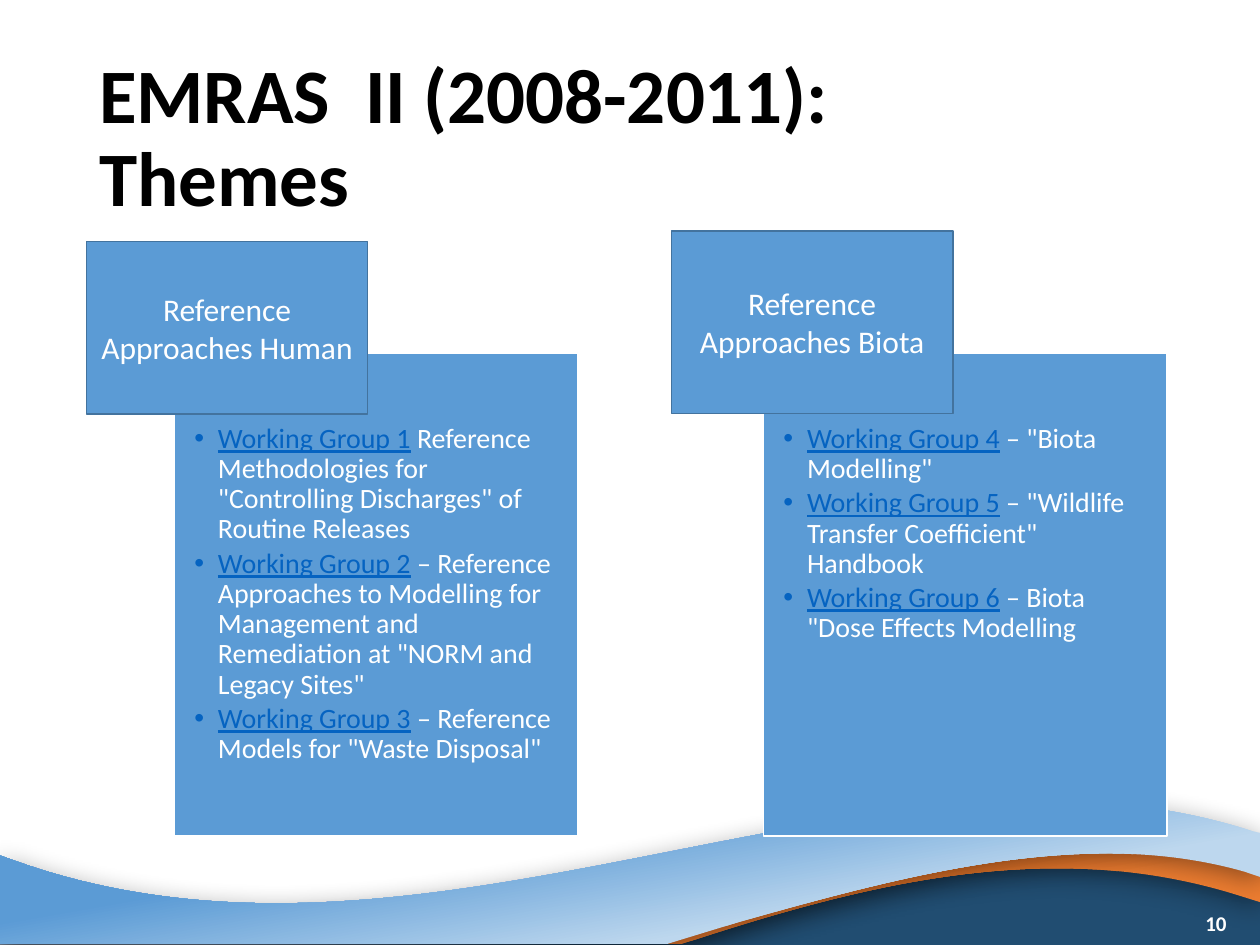
"""Build the EMRAS II themes slide with two reference-approach panels."""
from lxml.etree import SubElement
from pptx import Presentation
from pptx.dml.color import RGBColor
from pptx.enum.shapes import MSO_SHAPE
from pptx.enum.text import MSO_ANCHOR, PP_ALIGN
from pptx.oxml.ns import qn
from pptx.util import Pt

BLACK = RGBColor(0x00, 0x00, 0x00)
WHITE = RGBColor(0xFF, 0xFF, 0xFF)
BLUE = RGBColor(0x5B, 0x9B, 0xD5)
BLUE_EDGE = RGBColor(0x43, 0x73, 0x9E)
PALE_BLUE = RGBColor(0xBD, 0xD7, 0xEE)
LINK = RGBColor(0x05, 0x63, 0xC1)
SLATE = RGBColor(0x84, 0x97, 0xB0)
NAVY = RGBColor(0x21, 0x4D, 0x71)
ORANGE = RGBColor(0xED, 0x7D, 0x31)
RUST = RGBColor(0xC5, 0x5A, 0x11)
FONT = "Calibri"

WAVES = [
    (725, 60, [(0.21, SLATE), (0.51, NAVY)], [
        (0, 514), (165, 538.5, 216, 544, 501, 489),
        (621.4, 489, 751.7, 487.4, 720, 504.7), (720, 544.3), (0, 544.3)]),
    (720, 260, [(0.28, ORANGE), (0.62, RUST)], [
        (596.9, 478.1), (603.4, 478.1, 609.8, 478.1, 616.3, 478.1),
        (649.4, 478.8, 681.1, 481.7, 710.6, 488.2),
        (720, 491), (720, 515.5), (708.5, 511.9),
        (604.1, 478.8, 500.4, 503.3, 398.9, 536.4), (389.5, 539.3), (0, 539.3),
        (0, 506.2), (0.7, 506.2), (144, 563.8, 394.6, 479.5, 596.9, 478.1)]),
    (720, 260, [(0.3, PALE_BLUE), (0.67, BLUE)], [
        (600.5, 457.9), (640.1, 457.9, 678.2, 463, 716.4, 475.2), (720, 475.9),
        (720, 501.1), (711.4, 498.2), (623.5, 473, 524.9, 497.5, 421.9, 527),
        (381.6, 539.3), (0, 539.3), (0, 488.9), (12.2, 493.2),
        (207.4, 560.9, 411.8, 457.2, 600.5, 457.9)]),
]

THEMES = [
    ("Reference Approaches Human", 49.5, 138, 98.5, 99.7, [
        ("Working Group 1", " Reference Methodologies for \"Controlling Discharges\" of Routine Releases"),
        ("Working Group 2", " – Reference Approaches to Modelling for Management and Remediation at \"NORM and Legacy Sites\""),
        ("Working Group 3", " – Reference Models for \"Waste Disposal\"")]),
    ("Reference Approaches Biota", 383.8, 131.8, 104.5, 436.3, [
        ("Working Group 4", " – \"Biota Modelling\""),
        ("Working Group 5", " – \"Wildlife Transfer Coefficient\" Handbook"),
        ("Working Group 6", " – Biota \"Dose Effects Modelling")]),
]


def add_run(p, text, size, color, bold=False, underline=False):
    r = p.add_run()
    r.text = text
    r.font.name = FONT
    r.font.size = Pt(size)
    r.font.color.rgb = color
    r.font.bold = bold
    r.font.underline = underline


def add_box(left, top, width, height, edge):
    sp = s.shapes.add_shape(MSO_SHAPE.RECTANGLE, Pt(left), Pt(top), Pt(width), Pt(height))
    sp.shadow.inherit = False
    sp.fill.solid()
    sp.fill.fore_color.rgb = BLUE
    sp.line.color.rgb = edge
    sp.line.width = Pt(1)
    return sp


prs = Presentation()
prs.slide_width, prs.slide_height = Pt(720), Pt(540)
s = prs.slides.add_slide(prs.slide_layouts[5])

for width, angle, stops, steps in WAVES:
    fb = s.shapes.build_freeform(Pt(steps[0][0]), Pt(steps[0][1]))
    fb.add_line_segments([(Pt(step[-2]), Pt(step[-1])) for step in steps[1:]], close=True)
    sp = fb.convert_to_shape()
    outline = next(sp._element.iter(qn("a:path")))
    for segment, step in zip(outline.findall(qn("a:lnTo")), steps[1:]):
        if len(step) == 6:
            segment.tag = qn("a:cubicBezTo")
            for child in list(segment):
                segment.remove(child)
            for x, y in zip(step[::2], step[1::2]):
                SubElement(segment, qn("a:pt"), x=str(Pt(x) - sp.left), y=str(Pt(y) - sp.top))
    sp.width = Pt(width)
    outline.set("w", str(Pt(width)))
    sp.line.fill.background()
    sp.fill.gradient()
    sp.fill.gradient_angle = 360 - angle
    for stop, (position, color) in zip(sp.fill.gradient_stops, stops):
        stop.position = position
        stop.color.rgb = color
    sp.shadow.inherit = False
    effects = sp._element.spPr.find(qn("a:effectLst"))
    shadow = SubElement(effects, qn("a:outerShdw"), blurRad=str(Pt(15)), dist=str(Pt(3)),
                        dir="5400000", algn="t", rotWithShape="0")
    SubElement(SubElement(shadow, qn("a:srgbClr"), val=str(BLACK)), qn("a:alpha"), val="40000")

title = s.shapes.title
title.left, title.top, title.width, title.height = Pt(49.5), Pt(27.7), Pt(621), Pt(104.4)
tf = title.text_frame
tf.word_wrap = True
tf.vertical_anchor = MSO_ANCHOR.MIDDLE
p = tf.paragraphs[0]
p.alignment = PP_ALIGN.LEFT
p.line_spacing = 0.9
add_run(p, "EMRAS  II (2008-2011):", 44, BLACK, bold=True)
p.add_line_break()
add_run(p, "Themes", 44, BLACK, bold=True)

sp = s.shapes.add_textbox(Pt(660), Pt(513), Pt(48), Pt(28.8))
tf = sp.text_frame
tf.word_wrap = True
tf.vertical_anchor = MSO_ANCHOR.MIDDLE
p = tf.paragraphs[0]
p.alignment = PP_ALIGN.RIGHT
add_run(p, "10", 12, WHITE, bold=True)

for heading, left, top, height, panel_left, groups in THEMES:
    panel = add_box(panel_left, 201.6, 230.4, 276.2, WHITE)
    sp = s.shapes.add_textbox(panel.left, panel.top, panel.width, panel.height)
    tf = sp.text_frame
    tf.word_wrap = True
    tf.margin_left = tf.margin_right = tf.margin_bottom = Pt(11.4)
    tf.margin_top = Pt(40.8)
    for i, (group, topic) in enumerate(groups):
        p = tf.add_paragraph() if i else tf.paragraphs[0]
        pPr = p._p.get_or_add_pPr()
        pPr.set("marL", str(Pt(13.5)))
        pPr.set("indent", str(Pt(-13.5)))
        SubElement(SubElement(pPr, qn("a:buClr")), qn("a:srgbClr"), val=str(LINK))
        SubElement(pPr, qn("a:buFont"), typeface="Arial")
        SubElement(pPr, qn("a:buChar"), char="•")
        p.level = 1
        p.alignment = PP_ALIGN.LEFT
        p.line_spacing = 0.9
        p.space_after = Pt(2.4)
        add_run(p, group, 16, LINK, underline=True)
        add_run(p, topic, 16, WHITE)
    tf = add_box(left, top, 160.6, height, BLUE_EDGE).text_frame
    tf.word_wrap = True
    tf.vertical_anchor = MSO_ANCHOR.MIDDLE
    p = tf.paragraphs[0]
    p.alignment = PP_ALIGN.CENTER
    add_run(p, heading, 18, WHITE)

prs.save("out.pptx")
